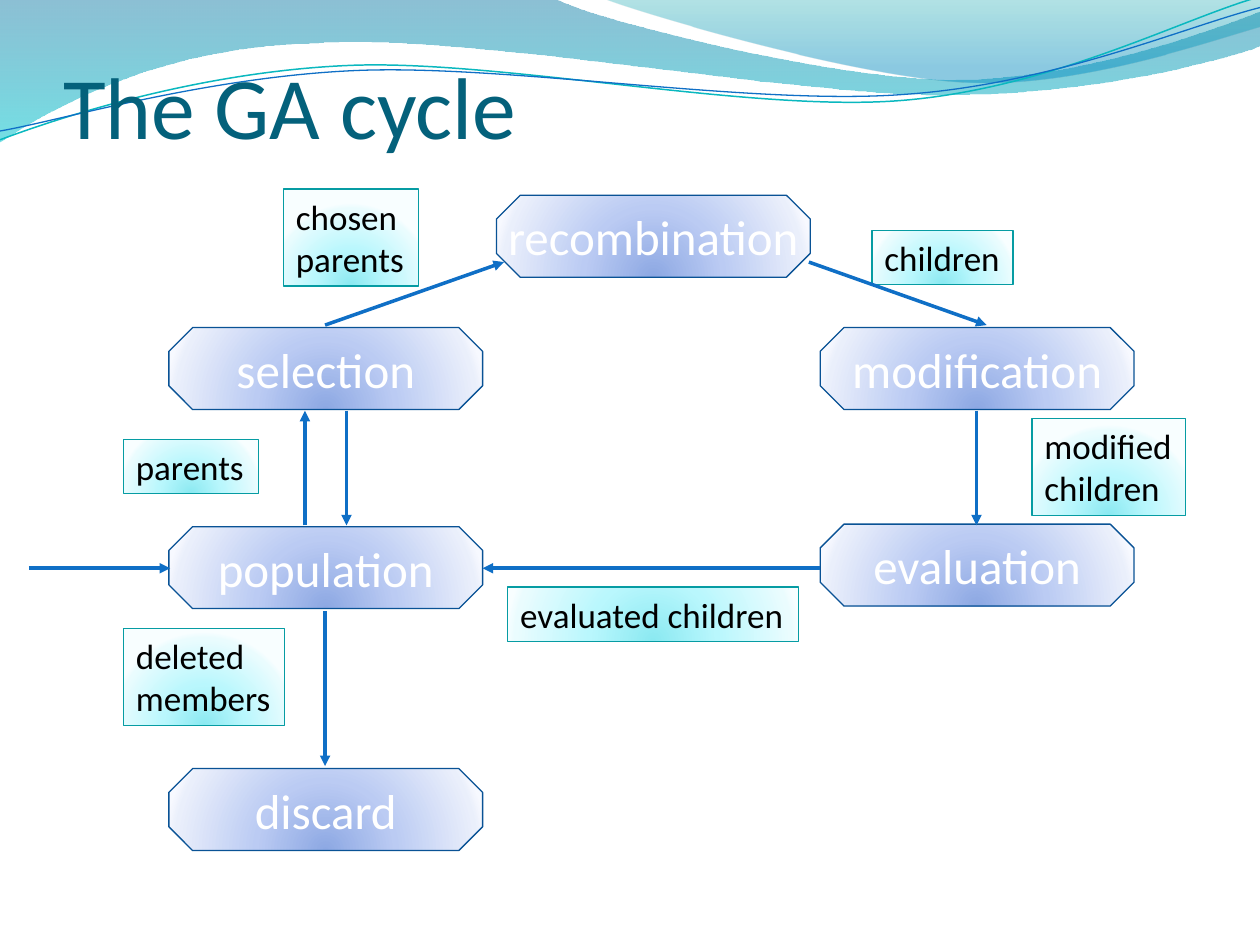
"""Build the slide of the genetic algorithm cycle."""
import pptx
import pptx.dml.color
import pptx.enum.shapes
import pptx.enum.text
import pptx.oxml
import pptx.oxml.ns
import pptx.util

Inches, Pt = pptx.util.Inches, pptx.util.Pt
RGBColor = pptx.dml.color.RGBColor
SHAPE = pptx.enum.shapes.MSO_SHAPE
ANCHOR = pptx.enum.text.MSO_ANCHOR
ALIGN = pptx.enum.text.PP_ALIGN
FIT = pptx.enum.text.MSO_AUTO_SIZE

TITLE_TEAL = RGBColor(0x04, 0x61, 0x7B)
WHITE = RGBColor(0xFF, 0xFF, 0xFF)
BLACK = RGBColor(0, 0, 0)
BLUE = RGBColor(0x0F, 0x6F, 0xC6)
AQUA = RGBColor(0x0A, 0xB8, 0xBF)
STEP_EDGE = RGBColor(0x09, 0x52, 0x95)
LABEL_EDGE = RGBColor(0x06, 0x9C, 0xA3)


def glow(*colours):
    return [(at, RGBColor.from_string(c), 100) for at, c in zip((0, 43, 93, 100), colours)]


STEP_GLOW = glow("8DA8E3", "BBCBF3", "EAEFFB", "F7F9FF")
LABEL_GLOW = glow("8BE9F1", "B9F7FD", "EAFCFE", "F8FEFF")
BAND_FADE = [(0, RGBColor(0, 0x74, 0xA1), 45), (100, RGBColor(0, 0xC6, 0xCF), 55)]
CREST_FADE = [(0, RGBColor(0, 0xA1, 0xA9), 30), (80, RGBColor(0, 0x8B, 0xBF), 45)]
LINEAR = '<a:lin ang="5400000" scaled="1"/>'
RADIAL = ('<a:path path="circle"><a:fillToRect l="50000" t="130000" '
          'r="50000" b="-30000"/></a:path>')

BANDS = [
    (BAND_FADE, [(0, 0), (4.4, -0.01), (4.76, 0.17, 6.64, 0.63, 7.58, 0.63),
                 (8.53, 0.63, 9.58, 0.26, 10, 0.09), (10.01, 0.36),
                 (9.83, 0.44, 8.7, 0.76, 7.46, 0.75), (6.22, 0.75, 3.82, 0.28, 2.57, 0.34),
                 (1.29, 0.36, 0.46, 0.83, -0.01, 1.13)]),
    (CREST_FADE, [(4.79, -0.01), (5.09, 0.11, 6.82, 0.62, 7.69, 0.65),
                  (8.56, 0.69, 9.61, 0.32, 10, 0.21), (10, 0)]),
]
RIPPLES = [
    (AQUA, 0.85, [(0, 1.11), (0.48, 0.93, 1.58, 0.57, 2.77, 0.52),
                  (3.95, 0.47, 5.93, 0.89, 7.13, 0.8), (8.33, 0.71, 9.38, 0.15, 9.98, -0.02)]),
    (BLUE, 0.75, [(0, 1.04), (0.47, 0.96, 1.64, 0.61, 2.83, 0.56),
                  (4.03, 0.51, 5.97, 0.84, 7.17, 0.75), (8.36, 0.67, 9.41, 0.21, 10, 0.06)]),
]
LEFT, CENTRE, RIGHT = 1.34, 3.94, 6.51
STEP_SIZE = 2.49, 0.65
STEPS = [
    ("selection", LEFT, 2.6), ("population", LEFT, 4.18), ("discard", LEFT, 6.1),
    ("recombination", CENTRE, 1.55), ("modification", RIGHT, 2.6), ("evaluation", RIGHT, 4.16),
]
LABELS = [
    ("chosen\nparents", 2.25, 1.5, 1.07), ("children", 6.92, 1.83, 1.12),
    ("parents", 0.98, 3.49, 1.07), ("modified\nchildren", 8.19, 3.32, 1.22),
    ("evaluated children", 4.03, 4.66, 2.31), ("deleted\nmembers", 0.98, 4.99, 1.28),
]
ARROWS = [
    (2.58, 2.58, 4, 2.08), (6.42, 2.08, 7.83, 2.58), (2.42, 4.17, 2.42, 3.26),
    (2.75, 3.26, 2.75, 4.17), (2.58, 4.85, 2.58, 6.08), (6.51, 4.51, 3.83, 4.51),
    (7.75, 3.26, 7.75, 4.17), (0.23, 4.51, 1.35, 4.51),
]
DRAWING_NS = pptx.oxml.ns.nsdecls("a")
qn = pptx.oxml.ns.qn


def write(shape, text, *, size, colour, align=ALIGN.LEFT, anchor=ANCHOR.MIDDLE,
          insets=(0.1, 0.05, 0.1, 0.05), wrap=False, fit=FIT.NONE):
    frame = shape.text_frame
    frame.text = text
    frame.word_wrap, frame.auto_size, frame.vertical_anchor = wrap, fit, anchor
    (frame.margin_left, frame.margin_top,
     frame.margin_right, frame.margin_bottom) = map(Inches, insets)
    for paragraph in frame.paragraphs:
        paragraph.alignment = align
        font = paragraph.runs[0].font
        font.name, font.size, font.color.rgb = "Calibri", Pt(size), colour


def fill_gradient(shape, stops, direction):
    shape.fill.background()
    empty_fill = shape.element.spPr.find(qn("a:noFill"))
    marks = "".join(
        f'<a:gs pos="{at * 1000}"><a:srgbClr val="{colour}">'
        f'<a:alpha val="{opacity * 1000}"/></a:srgbClr></a:gs>'
        for at, colour, opacity in stops)
    gradient = pptx.oxml.parse_xml(
        f'<a:gradFill {DRAWING_NS} rotWithShape="1"><a:gsLst>{marks}</a:gsLst>'
        f'{direction}</a:gradFill>')
    shape.element.spPr.replace(empty_fill, gradient)


def outline(shape, colour, width):
    shape.line.color.rgb, shape.line.width = colour, Pt(width)


def add_wave(shapes, segments, closed):
    start, *rest = [[Inches(value) for value in segment] for segment in segments]
    builder = shapes.build_freeform(*start)
    builder.add_line_segments([segment[-2:] for segment in rest], close=closed)
    wave = builder.convert_to_shape()
    wave.shadow.inherit = False
    sides = list(wave.element.iter(qn("a:lnTo")))
    for side, segment in zip(sides, rest):
        if len(segment) == 6:
            knots = "".join(f'<a:pt x="{x - wave.left}" y="{y - wave.top}"/>'
                            for x, y in zip(segment[::2], segment[1::2]))
            curve = pptx.oxml.parse_xml(
                f'<a:cubicBezTo {DRAWING_NS}>{knots}</a:cubicBezTo>')
            side.getparent().replace(side, curve)
    return wave


def add_box(shapes, kind, place, stops, edge):
    box = shapes.add_shape(kind, *map(Inches, place))
    box.shadow.inherit = False
    fill_gradient(box, stops, RADIAL)
    outline(box, edge, 0.75)
    return box


def main():
    deck = pptx.Presentation()
    deck.slide_width, deck.slide_height = Inches(10), Inches(7.5)
    shapes = deck.slides.add_slide(deck.slide_layouts[6]).shapes

    for stops, segments in BANDS:
        band = add_wave(shapes, segments, True)
        fill_gradient(band, stops, LINEAR)
        band.line.fill.background()
    for colour, width, segments in RIPPLES:
        ripple = add_wave(shapes, segments, False)
        ripple.fill.background()
        outline(ripple, colour, width)

    title = shapes.add_textbox(*map(Inches, (0.5, 0.08, 9.08, 1.17)))
    write(title, "The GA cycle", size=50, colour=TITLE_TEAL, anchor=ANCHOR.BOTTOM,
          insets=(0, 0.05, 0, 0), wrap=True)

    for text, left, top, width in LABELS:
        height = 0.43 + 0.34 * text.count("\n")
        label = add_box(shapes, SHAPE.RECTANGLE, (left, top, width, height),
                        LABEL_GLOW, LABEL_EDGE)
        write(label, text, size=20, colour=BLACK, anchor=ANCHOR.TOP, fit=FIT.SHAPE_TO_FIT_TEXT)
    for text, left, top in STEPS:
        step = add_box(shapes, SHAPE.OCTAGON, (left, top, *STEP_SIZE), STEP_GLOW, STEP_EDGE)
        step.adjustments[0] = 0.29
        write(step, text, size=28, colour=WHITE, align=ALIGN.CENTER)
    for ends in ARROWS:
        arrow = shapes.add_connector(pptx.enum.shapes.MSO_CONNECTOR.STRAIGHT, *map(Inches, ends))
        outline(arrow, BLUE, 2)
        properties = arrow.element.spPr
        properties.find(qn("a:ln")).append(
            pptx.oxml.parse_xml(f'<a:tailEnd {DRAWING_NS} type="triangle"/>'))
        properties.append(pptx.oxml.parse_xml(f'<a:effectLst {DRAWING_NS}/>'))

    deck.save("out.pptx")


if __name__ == "__main__":
    main()
